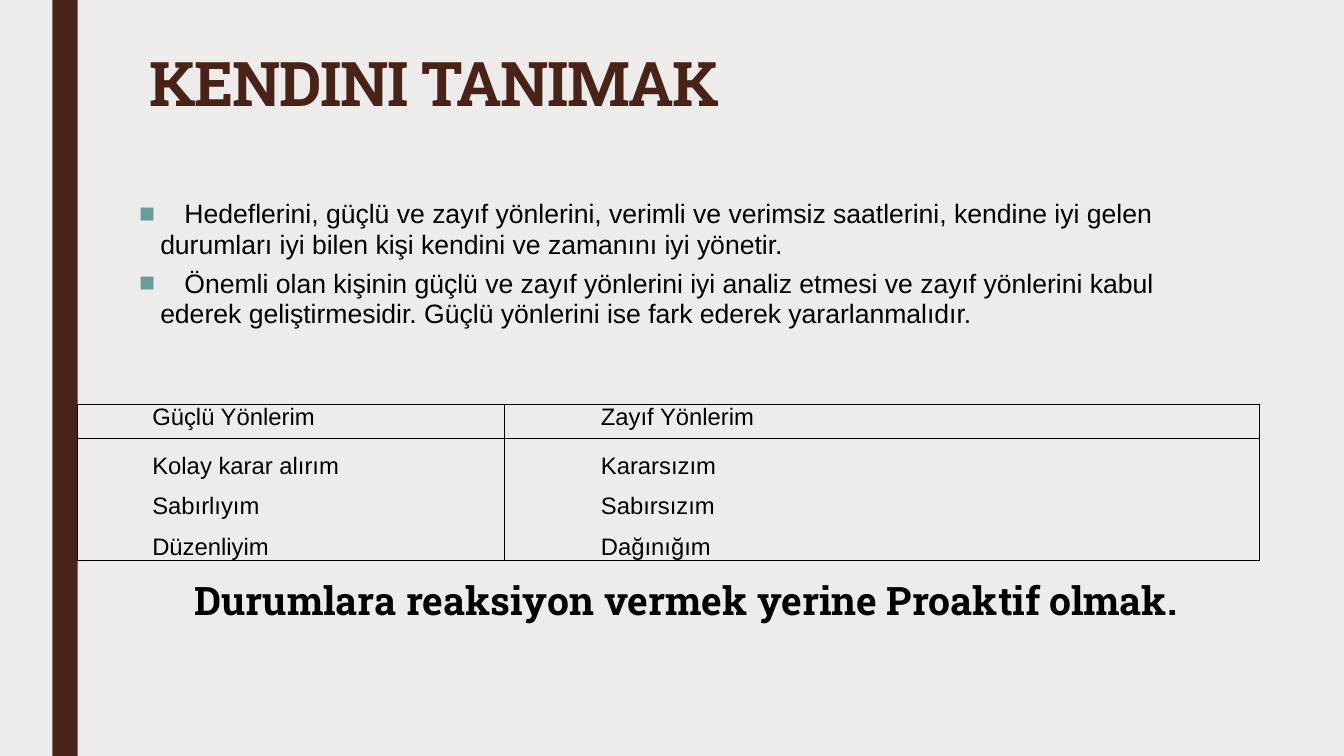
from pptx import Presentation
from pptx.dml.color import RGBColor
from pptx.enum.shapes import MSO_SHAPE as Shape
from pptx.enum.text import MSO_ANCHOR as Anchor, PP_ALIGN as Align
from pptx.oxml.ns import qn
from pptx.util import Inches, Pt
from lxml.etree import SubElement

BACKGROUND = RGBColor(0xED, 0xEC, 0xEB)
BROWN = RGBColor(0x4A, 0x23, 0x18)
TEAL = RGBColor(0x68, 0x9D, 0x9B)
BLACK = RGBColor(0, 0, 0)
SERIF = "Roboto Slab"
SANS = "Arial"

ADVICE = [
    ("Hedeflerini, güçlü ve zayıf yönlerini, verimli ve verimsiz saatlerini, "
     "kendine iyi gelen durumları iyi bilen kişi kendini ve zamanını iyi yönetir.", 21.8),
    ("Önemli olan kişinin güçlü ve zayıf yönlerini iyi analiz etmesi ve zayıf "
     "yönlerini kabul ederek geliştirmesidir. Güçlü yönlerini ise fark ederek "
     "yararlanmalıdır.", 21.6),
]
TRAITS = [
    ("Güçlü Yönlerim", ["Kolay karar alırım", "Sabırlıyım", "Düzenliyim"], 4.23, 0.74),
    ("Zayıf Yönlerim", ["Kararsızım", "Sabırsızım", "Dağınığım"], 7.49, 0.96),
]
ROW_HEIGHTS = [0.34, 1.21]


def add_span(para, text, size, font, color, bold=False):
    span = para.add_run()
    span.text = text
    span.font.size = Pt(size)
    span.font.name = font
    span.font.bold = bold
    span.font.color.rgb = color
    return span


def clear_margins(holder):
    holder.margin_left = holder.margin_right = 0
    holder.margin_top = holder.margin_bottom = 0


def add_box(page, left, top, width, height):
    box = page.shapes.add_textbox(Inches(left), Inches(top), Inches(width), Inches(height))
    box.text_frame.word_wrap = True
    return box.text_frame


def add_paragraph(frame, index):
    return frame.paragraphs[0] if index == 0 else frame.add_paragraph()


def add_side_bar(page, left, top, width, height):
    bar = page.shapes.add_shape(
        Shape.RECTANGLE, Inches(left), Inches(top), Inches(width), Inches(height))
    bar.shadow.inherit = False
    bar.fill.solid()
    bar.fill.fore_color.rgb = BROWN
    bar.line.fill.background()


def add_title(page, left, top, width, height):
    para = add_box(page, left, top, width, height).paragraphs[0]
    para.line_spacing = 0.89
    span = add_span(para, "KENDINI TANIMAK", 44, SERIF, BROWN, True)
    span.font._element.set("spc", "-100")


def set_bullet(para, hanging, text_start):
    properties = para._p.get_or_add_pPr()
    properties.set("marL", str(Inches(hanging)))
    properties.set("indent", str(-Inches(hanging)))
    color = SubElement(properties, qn("a:buClr"))
    SubElement(color, qn("a:srgbClr"), val=str(TEAL))
    SubElement(properties, qn("a:buFont"), typeface=SANS)
    SubElement(properties, qn("a:buChar"), char="■")
    tabs = SubElement(properties, qn("a:tabLst"))
    SubElement(tabs, qn("a:tab"), pos=str(Inches(text_start)), algn="l")


def add_advice(page, left, top, width, height):
    frame = add_box(page, left, top, width, height)
    clear_margins(frame)
    for index, (text, spacing) in enumerate(ADVICE):
        para = add_paragraph(frame, index)
        para.line_spacing = Pt(spacing)
        para.space_after = Pt(6.3)
        set_bullet(para, 0.21, 0.45)
        add_span(para, "\t" + text, 19, SANS, BLACK)


def set_borders(cell):
    properties = cell._tc.get_or_add_tcPr()
    for side in ("lnL", "lnR", "lnT", "lnB"):
        line = SubElement(properties, qn(f"a:{side}"), w=str(Pt(0.75)))
        fill = SubElement(line, qn("a:solidFill"))
        SubElement(fill, qn("a:srgbClr"), val=str(BLACK))


def fill_cell(cell, lines, indent, spacing=None):
    clear_margins(cell)
    set_borders(cell)
    cell.fill.background()
    for index, text in enumerate(lines):
        para = add_paragraph(cell.text_frame, index)
        para._p.get_or_add_pPr().set("marL", str(Inches(indent)))
        para.line_spacing = spacing
        add_span(para, text, 17, SANS, BLACK)


def add_traits_table(page, left, top, width, height):
    table = page.shapes.add_table(
        len(ROW_HEIGHTS), len(TRAITS),
        Inches(left), Inches(top), Inches(width), Inches(height)).table
    table.first_row = False
    table.horz_banding = False
    for row, row_height in zip(table.rows, ROW_HEIGHTS):
        row.height = Inches(row_height)
    for index, (heading, traits, column_width, indent) in enumerate(TRAITS):
        table.columns[index].width = Inches(column_width)
        fill_cell(table.cell(0, index), [heading], indent)
        fill_cell(table.cell(1, index), traits, indent, Pt(29))
        table.cell(1, index).vertical_anchor = Anchor.BOTTOM


def add_closing(page, left, top, width, height):
    frame = add_box(page, left, top, width, height)
    clear_margins(frame)
    para = frame.paragraphs[0]
    para.alignment = Align.CENTER
    para.line_spacing = Pt(38.9)
    add_span(para, "Durumlara reaksiyon vermek yerine Proaktif olmak.", 28, SERIF, BLACK, True)


def main():
    deck = Presentation()
    deck.slide_width = Inches(13.33)
    deck.slide_height = Inches(7.5)
    page = deck.slides.add_slide(deck.slide_layouts[6])
    page.background.fill.solid()
    page.background.fill.fore_color.rgb = BACKGROUND
    add_side_bar(page, 0.52, 0, 0.25, 7.5)
    add_title(page, 1.38, 0.49, 10.5, 0.92)
    add_advice(page, 1.38, 1.97, 10.34, 1.37)
    add_traits_table(page, 0.77, 4.01, 11.72, 1.55)
    add_closing(page, 0.94, 5.64, 11.72, 0.97)
    deck.save("out.pptx")


if __name__ == "__main__":
    main()
